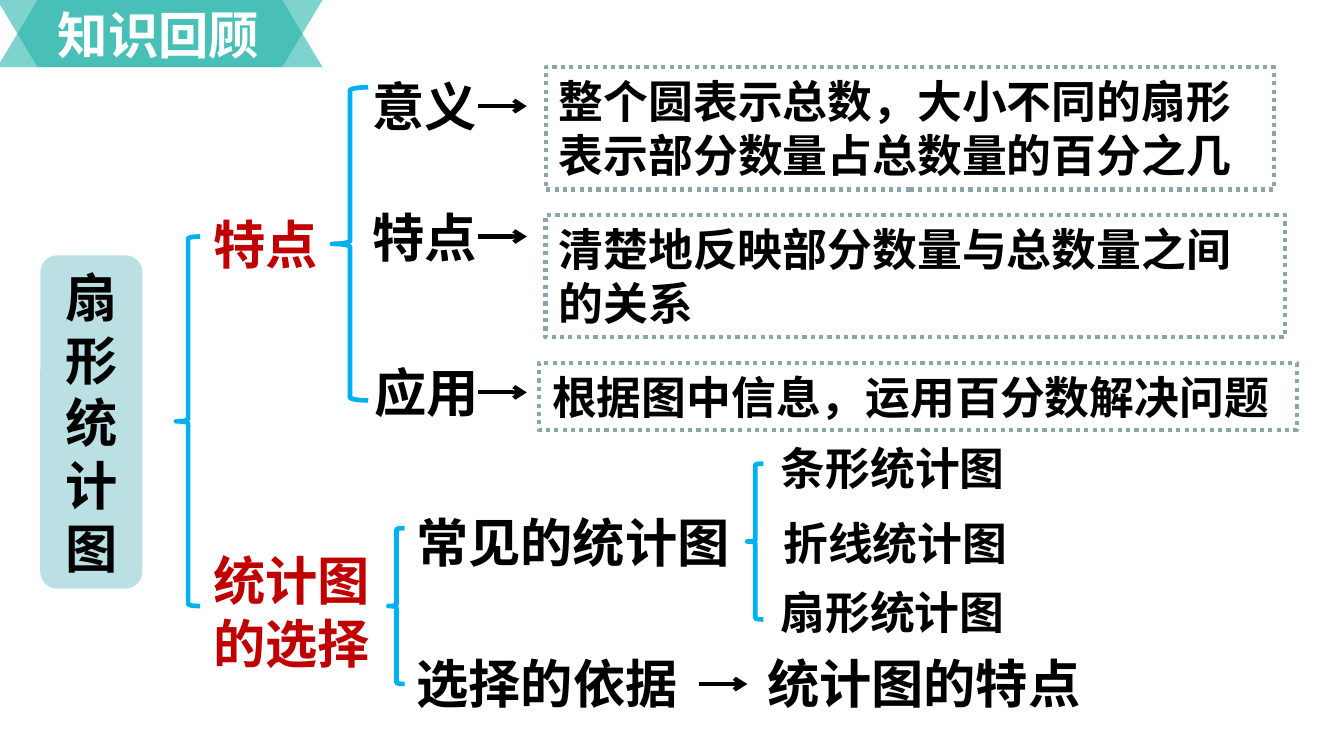
"""Builds the mind map slide that reviews pie charts."""
from dataclasses import dataclass

from lxml.etree import SubElement
from pptx import Presentation
from pptx.dml.color import RGBColor
from pptx.enum.dml import MSO_LINE
from pptx.enum.shapes import MSO_CONNECTOR, MSO_SHAPE
from pptx.enum.text import MSO_ANCHOR, PP_ALIGN
from pptx.oxml.ns import qn
from pptx.util import Inches, Pt

CELL = 0.1
COLUMNS, ROWS = 100, 56.25
FONT = "Noto Sans CJK SC"
BLACK, RED, WHITE = "000000", "C00000", "FFFFFF"
TEAL, PALE, SKY, GREY = "1FB3A9", "BBE0E3", "00B0F0", "8AA6A8"
LARGE, MEDIUM = 28, 24
ARROW_LENGTH = 3.6


@dataclass(frozen=True)
class Frame:
    column: float
    row: float
    columns: float
    rows: float

    def lengths(self):
        return [grid(n) for n in (self.column, self.row, self.columns, self.rows)]


@dataclass(frozen=True)
class Label:
    text: str
    frame: Frame
    size: int = LARGE
    color: str = BLACK


RIBBON = Frame(-0.2, 0, 24.2, 5)
HEADING = Label("知识回顾", Frame(3.3, -0.2, 17.6, 5.5), 27, WHITE)
ROOT = Label("扇形统计图", Frame(3, 19, 7.6, 24.8))
BRACES = [
    Frame(13.1, 17.6, 1.8, 27.5),
    Frame(24.7, 6.5, 2.7, 23.3),
    Frame(28.9, 39.3, 1.2, 11.6),
    Frame(55.6, 34.5, 1.2, 11.6),
]
LABELS = [
    Label("特点", Frame(14.9, 15.3, 10.8, 5.7), color=RED),
    Label("统计图的选择", Frame(14.9, 40.3, 14, 10.4), color=RED),
    Label("意义", Frame(26.7, 5, 10.6, 5.7)),
    Label("特点", Frame(26.7, 14.8, 10.6, 5.7)),
    Label("应用", Frame(26.9, 26.3, 10.6, 5.7)),
    Label("常见的统计图", Frame(30, 37.5, 26.7, 5.7)),
    Label("选择的依据", Frame(30, 48, 23.8, 5.7)),
    Label("统计图的特点", Frame(56.1, 48, 26.2, 5.7)),
    Label("条形统计图", Frame(57.1, 32.3, 23.2, 5), MEDIUM),
    Label("折线统计图", Frame(57.3, 37.9, 23.2, 5), MEDIUM),
    Label("扇形统计图", Frame(57.1, 43, 19.6, 5), MEDIUM),
]
NOTES = [
    Label("整个圆表示总数，大小不同的扇形表示部分数量占总数量的百分之几",
          Frame(40.6, 5, 54.2, 9.1), MEDIUM),
    Label("清楚地反映部分数量与总数量之间的关系",
          Frame(40.6, 16, 55, 9.1), MEDIUM),
    Label("根据图中信息，运用百分数解决问题",
          Frame(40.1, 27, 56.4, 5), MEDIUM),
]
ARROWS = [(35.6, 7.9), (35.6, 17.6), (35.6, 29.2), (52, 50.9)]


def grid(count: float) -> int:
    """Return the length of a number of grid cells."""
    return Inches(count * CELL)


def rgb(color: str) -> RGBColor:
    """Return the colour of a hex string."""
    return RGBColor.from_string(color)


def write(box, label: Label, align=PP_ALIGN.LEFT, anchor=MSO_ANCHOR.TOP) -> None:
    """Write a bold label into a box."""
    frame = box.text_frame
    frame.text = label.text
    frame.word_wrap = True
    frame.vertical_anchor = anchor
    para = frame.paragraphs[0]
    para.alignment = align
    font = para.font
    font.size, font.bold, font.name = Pt(label.size), True, FONT
    font.color.rgb = rgb(label.color)
    properties = para._p.pPr.find(qn("a:defRPr"))
    SubElement(properties, qn("a:ea")).set("typeface", FONT)


def add_plain(page, kind, frame: Frame, fill: str = ""):
    """Add a shape without shadow or outline, filled if a colour is given."""
    shape = page.shapes.add_shape(kind, *frame.lengths())
    shape.shadow.inherit = False
    shape.line.fill.background()
    if fill:
        shape.fill.solid()
        shape.fill.fore_color.rgb = rgb(fill)
    else:
        shape.fill.background()
    return shape


def outline(shape, color: str, width: float) -> None:
    """Give a shape a coloured outline."""
    shape.line.color.rgb = rgb(color)
    shape.line.width = Pt(width)


def add_heading(page) -> None:
    """Add the crossed ribbon with the slide title on it."""
    for flipped in (True, False):
        band = add_plain(page, MSO_SHAPE.PARALLELOGRAM, RIBBON, TEAL)
        band.adjustments[0] = 0.6
        if flipped:
            band._element.spPr.xfrm.set("flipH", "1")
        color = band._element.spPr.find(qn("a:solidFill"))[0]
        SubElement(color, qn("a:alpha")).set("val", "57000")
    title = page.shapes.title
    title.left, title.top, title.width, title.height = HEADING.frame.lengths()
    write(title, HEADING, PP_ALIGN.JUSTIFY)
    page.shapes._spTree.append(title._element)


def add_root(page) -> None:
    """Add the rounded topic box, one character to a line."""
    box = add_plain(page, MSO_SHAPE.ROUNDED_RECTANGLE, ROOT.frame, PALE)
    write(box, ROOT, PP_ALIGN.CENTER, MSO_ANCHOR.MIDDLE)


def add_brace(page, frame: Frame) -> None:
    """Add a left brace that opens a branch."""
    outline(add_plain(page, MSO_SHAPE.LEFT_BRACE, frame), SKY, 2.5)


def add_label(page, label: Label) -> None:
    """Add a text box."""
    write(page.shapes.add_textbox(*label.frame.lengths()), label)


def add_note(page, note: Label) -> None:
    """Add an explanation in a dotted frame."""
    box = add_plain(page, MSO_SHAPE.RECTANGLE, note.frame)
    outline(box, GREY, 2.25)
    box.line.dash_style = MSO_LINE.ROUND_DOT
    write(box, note)


def add_arrow(page, column: float, row: float) -> None:
    """Add a short arrow that points right."""
    arrow = page.shapes.add_connector(
        MSO_CONNECTOR.STRAIGHT, grid(column), grid(row),
        grid(column + ARROW_LENGTH), grid(row))
    outline(arrow, BLACK, 2.25)
    SubElement(arrow.line._get_or_add_ln(), qn("a:tailEnd")).set("type", "arrow")
    SubElement(arrow._element.spPr, qn("a:effectLst"))


def main() -> None:
    """Build and save the deck."""
    deck = Presentation()
    deck.slide_width, deck.slide_height = grid(COLUMNS), grid(ROWS)
    page = deck.slides.add_slide(deck.slide_layouts[5])
    add_heading(page)
    add_root(page)
    for frame in BRACES:
        add_brace(page, frame)
    for label in LABELS:
        add_label(page, label)
    for note in NOTES:
        add_note(page, note)
    for column, row in ARROWS:
        add_arrow(page, column, row)
    deck.save("out.pptx")


if __name__ == "__main__":
    main()
